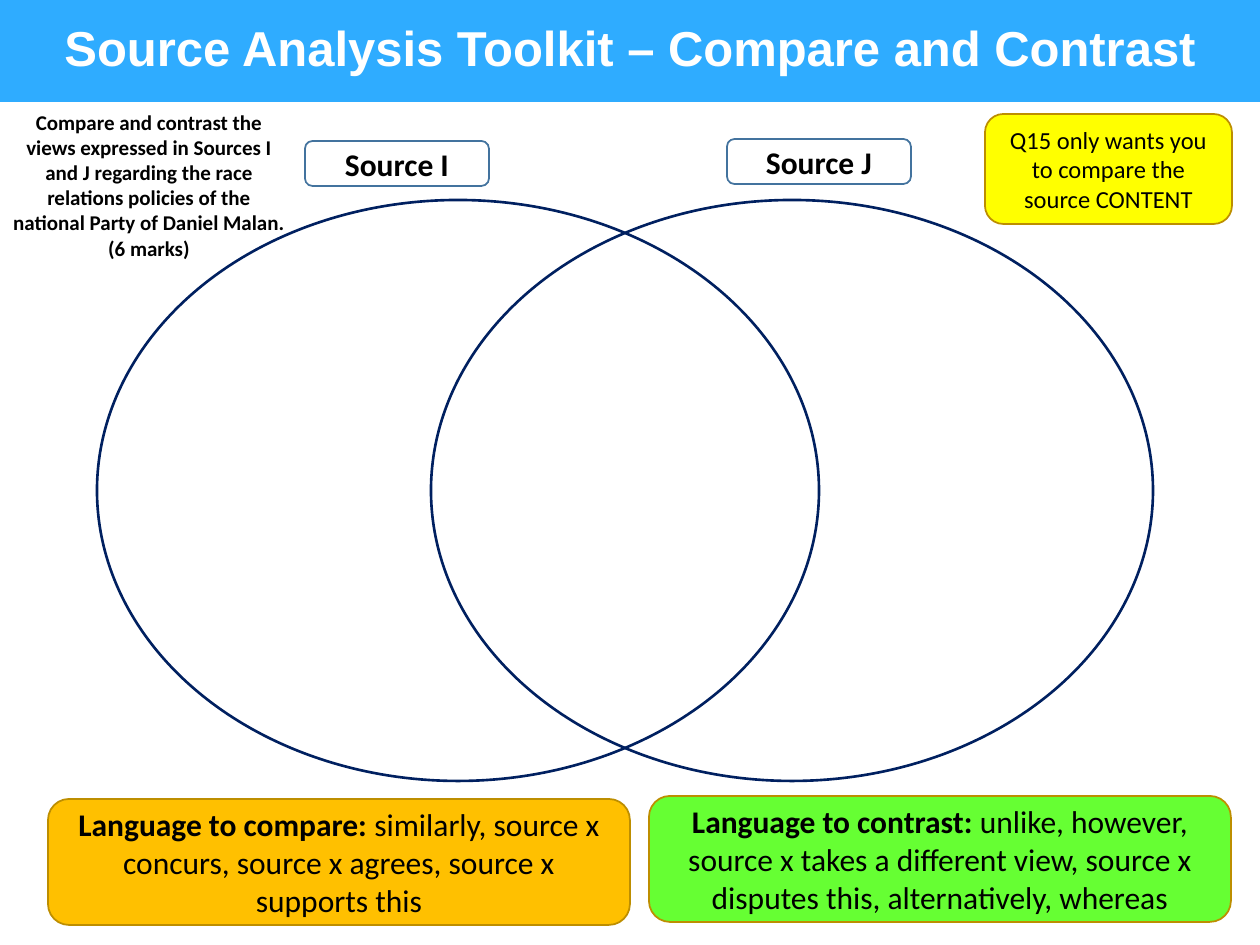
import dataclasses

import pptx
import pptx.dml.color
import pptx.enum.shapes
import pptx.enum.text
import pptx.util

SHAPES = pptx.enum.shapes.MSO_SHAPE
ANCHOR = pptx.enum.text.MSO_ANCHOR
EMU_PER_PX = 914400 / 126


@dataclasses.dataclass(frozen=True)
class Theme:
    """Colours, fonts and type sizes of the slide."""
    banner: str = "2FACFF"
    ring: str = "002060"
    label_edge: str = "43739E"
    card_edge: str = "BD8E00"
    compare: str = "FFC000"
    contrast: str = "66FF33"
    tip: str = "FFFF00"
    white: str = "FFFFFF"
    ink: str = "000000"
    heading_font: str = "Arial"
    body_font: str = "Calibri"
    title_size: int = 28
    large_size: int = 18
    tip_size: int = 14
    question_size: int = 12


THEME = Theme()


def px(length):
    """Turn whole pixels into EMU."""
    return pptx.util.Emu(round(length * EMU_PER_PX))


def rgb(colour):
    """Turn a hex string into a colour."""
    return pptx.dml.color.RGBColor.from_string(colour)


def set_all(target, formats):
    """Set every attribute named in a dict of format values."""
    for attribute, value in formats.items():
        setattr(target, attribute, value)


def place(part, box):
    """Move a part to a pixel box."""
    set_all(part, dict(zip(("left", "top", "width", "height"), map(px, box))))


def write(part, runs, size, font=THEME.body_font, colour=THEME.ink,
          anchor=ANCHOR.MIDDLE):
    """Write one centred paragraph of (text, bold) runs."""
    set_all(part.text_frame, {"word_wrap": True, "vertical_anchor": anchor,
                              "auto_size": pptx.enum.text.MSO_AUTO_SIZE.NONE})
    paragraph = part.text_frame.paragraphs[0]
    paragraph.alignment = pptx.enum.text.PP_ALIGN.CENTER
    for text, bold in runs:
        run = paragraph.add_run()
        run.text = text
        set_all(run.font, {"name": font, "size": pptx.util.Pt(size), "bold": bold})
        run.font.color.rgb = rgb(colour)


def add_outline(slide, preset, box, edge, weight, fill=None):
    """Add an outlined preset shape, hollow unless a fill is given."""
    outline = slide.shapes.add_shape(preset, *map(px, box))
    outline.shadow.inherit = False
    if fill:
        outline.fill.solid()
        outline.fill.fore_color.rgb = rgb(fill)
    else:
        outline.fill.background()
    outline.line.color.rgb = rgb(edge)
    outline.line.width = pptx.util.Pt(weight)
    return outline


def add_card(slide, box, fill, edge, runs, size):
    """Add a rounded card with text."""
    card = add_outline(slide, SHAPES.ROUNDED_RECTANGLE, box, edge, 1, fill)
    write(card, runs, size)


def add_banner(slide, box):
    """Turn the title placeholder into the banner."""
    banner = slide.shapes.title
    place(banner, box)
    banner.fill.solid()
    banner.fill.fore_color.rgb = rgb(THEME.banner)
    write(banner, [("Source Analysis Toolkit – Compare and Contrast", True)],
          THEME.title_size, THEME.heading_font, THEME.white)
    banner.text_frame.paragraphs[0].line_spacing = 0.93


def add_venn(slide, box):
    """Add two overlapping rings and their source labels."""
    left, top, width, height = box
    ring_width = 722
    for ring_left in (left, left + width - ring_width):
        add_outline(slide, SHAPES.FLOWCHART_CONNECTOR,
                    (ring_left, top, ring_width, height), THEME.ring, 1.5)
    for text, dx, dy in (("Source I", 208, -59), ("Source J", 630, -61)):
        add_card(slide, (left + dx, top + dy, 184, 45), THEME.white,
                 THEME.label_edge, [(text, True)], THEME.large_size)


def add_language(slide, box):
    """Add the two cards of useful phrases."""
    left, top, width, height = box
    card_width = 582
    add_card(slide, (left, top + 3, card_width, height - 3), THEME.compare,
             THEME.card_edge,
             [("Language to compare:", True),
              (" similarly, source x concurs, source x agrees, "
               "source x supports this", False)], THEME.large_size)
    add_card(slide, (left + width - card_width, top, card_width, height - 3),
             THEME.contrast, THEME.card_edge,
             [("Language to contrast:", True),
              (" unlike, however, source x takes a different view, source x "
               "disputes this, alternatively, whereas", False)],
             THEME.large_size)


def add_question(slide, box):
    """Add the exam question."""
    question = slide.shapes.add_textbox(*map(px, box))
    write(question, [("Compare and contrast the views expressed in Sources I "
                      "and J regarding the race relations policies of the "
                      "national Party of Daniel Malan. (6 marks)", True)],
          THEME.question_size, anchor=ANCHOR.TOP)


def add_tip(slide, box):
    """Add the exam tip."""
    add_card(slide, box, THEME.tip, THEME.card_edge,
             [("Q15 only wants you to compare the source CONTENT", False)],
             THEME.tip_size)


def main():
    """Build and save the slide."""
    deck = pptx.Presentation()
    set_all(deck, {"slide_width": px(1260), "slide_height": px(945)})
    slide = deck.slides.add_slide(deck.slide_layouts.get_by_name("Title Only"))
    add_banner(slide, (0, -1, 1260, 103))
    add_venn(slide, (97, 200, 1056, 581))
    add_language(slide, (48, 796, 1183, 129))
    add_question(slide, (-1, 103, 300, 165))
    add_tip(slide, (985, 114, 247, 110))
    deck.save("out.pptx")


if __name__ == "__main__":
    main()
